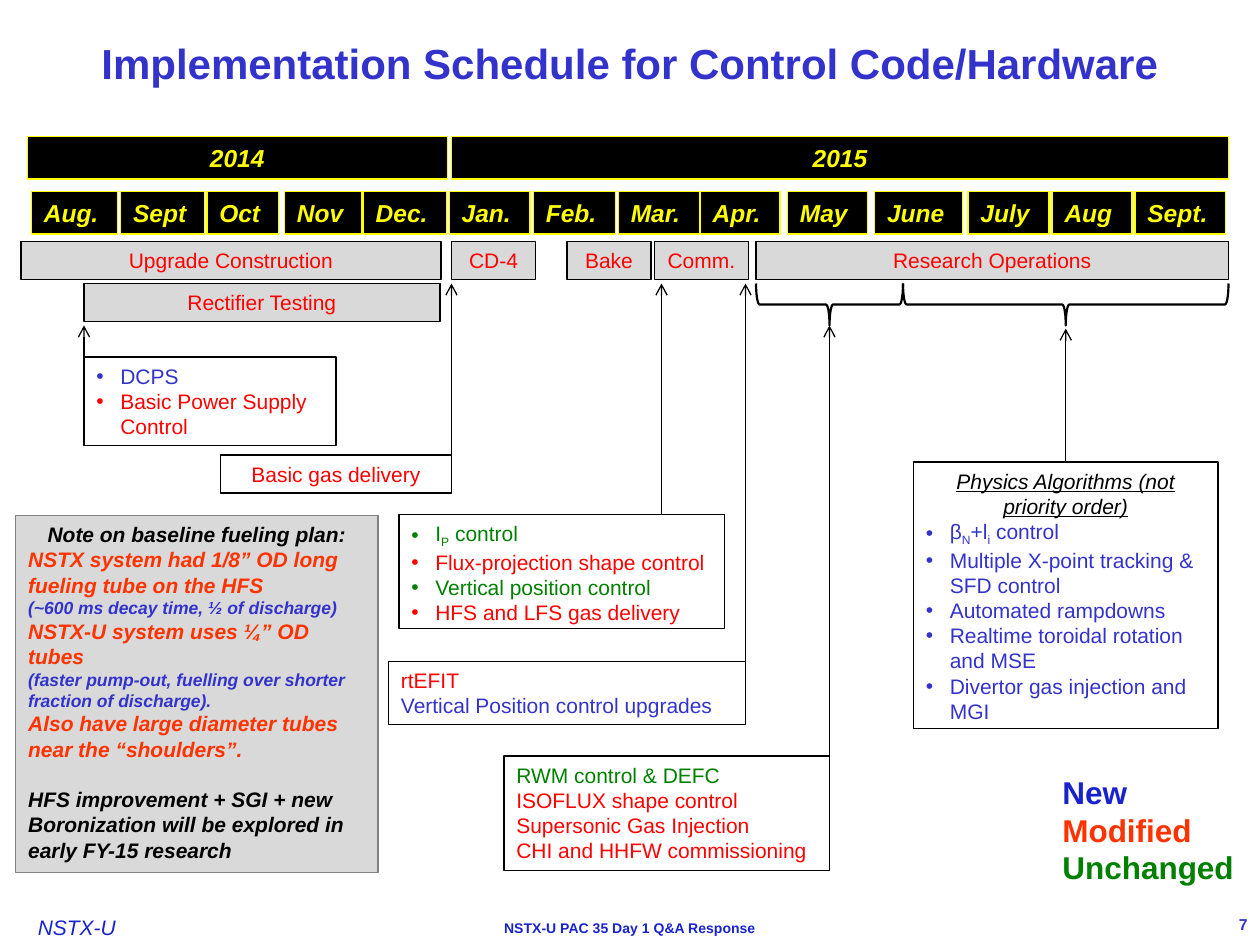
from lxml.etree import SubElement
from pptx import Presentation
from pptx.dml.color import RGBColor
from pptx.enum.shapes import MSO_CONNECTOR, MSO_SHAPE as SHAPE
from pptx.enum.text import MSO_ANCHOR as ANCHOR, MSO_AUTO_SIZE as AUTO, PP_ALIGN as ALIGN
from pptx.oxml.ns import qn
from pptx.util import Emu, Inches, Pt

BLACK = RGBColor(0x00, 0x00, 0x00)
YELLOW = RGBColor(0xFF, 0xFF, 0x00)
GREY = RGBColor(0xD9, 0xD9, 0xD9)
EDGE = RGBColor(0x80, 0x80, 0x80)
RED = RGBColor(0xFF, 0x00, 0x00)
ORANGE = RGBColor(0xFF, 0x33, 0x00)
GREEN = RGBColor(0x00, 0x80, 0x00)
BLUE = RGBColor(0x33, 0x33, 0xCC)
NAVY = RGBColor(0x18, 0x22, 0xCD)

# The grid is 120 columns by 90 rows, each a twelfth of an inch
UNIT = Inches(1) / 12
BAR_ROW, SECOND_ROW = 23, 27

# Month name, left column, columns wide
MONTHS = [
    ("Aug.", 3, 8.2), ("Sept", 11.5, 8), ("Oct", 19.7, 6.8), ("Nov", 27.1, 7.4),
    ("Dec.", 34.6, 7.9), ("Jan.", 42.8, 7.7), ("Feb.", 50.8, 7.8),
    ("Mar.", 58.9, 7.7), ("Apr.", 66.7, 7.6), ("May", 75, 7.6),
    ("June", 83.3, 8.4), ("July", 92.2, 7.7), ("Aug", 100.2, 7.6),
    ("Sept.", 108.1, 8.6),
]
YEARS = [("2014", 2.6, 40), ("2015", 43, 74)]
# Activity, left column, row, columns wide
ACTIVITIES = [
    ("Upgrade Construction", 2, BAR_ROW, 40), ("CD-4", 43, BAR_ROW, 8),
    ("Bake", 54, BAR_ROW, 8), ("Comm.", 62.3, BAR_ROW, 9),
    ("Research Operations", 72, BAR_ROW, 45),
    ("Rectifier Testing", 8, SECOND_ROW, 33.9),
]
# Column, start row, end row
ARROWS = [(8, 36, 31), (43, 45, 27), (63, 49, 27), (71, 63, 27),
          (79, 77, 31), (101.5, 44, 31.3)]
# Left column, columns wide
BRACES = [(72, 14), (86, 31)]


def grid(*cells):
    return [Emu(round(n * UNIT)) for n in cells]


def rows_for(lines):
    """Rows taken by a box holding this many 12-point lines."""
    return 1.2 + 2.42 * lines


def write(tf, text, color=BLACK, size=12, bold=False, italic=False, underline=False,
          align=ALIGN.LEFT, bullet=False, before=0):
    """Add a paragraph; text between bars is subscript."""
    p = tf.paragraphs[0]
    if p.runs:
        p = tf.add_paragraph()
    p.alignment = align
    if before:
        p.space_before = Pt(before)
    if bullet:
        pPr = p._p.get_or_add_pPr()
        pPr.set("marL", str(Inches(0.19)))
        pPr.set("indent", str(-Inches(0.19)))
        SubElement(pPr, qn("a:buFont"), typeface="Arial")
        SubElement(pPr, qn("a:buChar"), char="•")
    for i, part in enumerate(text.split("|")):
        r = p.add_run()
        r.text = part
        font = r.font
        font.name, font.size, font.color.rgb = "Arial", Pt(size), color
        font.bold, font.italic, font.underline = bold, italic, underline
        if i % 2:
            r._r.get_or_add_rPr().set("baseline", "-25000")


def add_box(slide, left, top, width, height, fill=None, line=BLACK, wrap=True):
    sp = slide.shapes.add_shape(SHAPE.RECTANGLE, *grid(left, top, width, height))
    sp.shadow.inherit = False
    if fill is None:
        sp.fill.background()
    else:
        sp.fill.solid()
        sp.fill.fore_color.rgb = fill
    sp.line.color.rgb, sp.line.width = line, Pt(0.75)
    tf = sp.text_frame
    tf.word_wrap, tf.vertical_anchor = wrap, ANCHOR.TOP
    tf.auto_size = AUTO.SHAPE_TO_FIT_TEXT
    return tf


def add_label(slide, left, top, width, height, wrap=True):
    tf = slide.shapes.add_textbox(*grid(left, top, width, height)).text_frame
    tf.word_wrap = wrap
    return tf


def add_list(slide, left, top, width, lines, items, bullet=False):
    tf = add_box(slide, left, top, width, rows_for(lines))
    for text, color in items:
        write(tf, text, color, bullet=bullet)
    return tf


def add_arrow(slide, column, start, end):
    x, y1, y2 = grid(column, start, end)
    line = slide.shapes.add_connector(MSO_CONNECTOR.STRAIGHT, x, y1, x, y2)
    line.line.color.rgb, line.line.width = BLACK, Pt(0.75)
    SubElement(line.line._get_or_add_ln(), qn("a:tailEnd"), type="arrow")
    SubElement(line._element.spPr, qn("a:effectLst"))


def add_brace(slide, left, width, top=SECOND_ROW, depth=4):
    """A right brace turned to point down, so its sides are swapped."""
    shift = (width - depth) / 2
    sp = slide.shapes.add_shape(
        SHAPE.RIGHT_BRACE, *grid(left + shift, top - shift, depth, width))
    sp.rotation = 90
    sp.shadow.inherit = False
    sp.fill.background()
    sp.line.color.rgb, sp.line.width = BLACK, Pt(1.25)


def add_timeline(slide):
    strong = dict(color=YELLOW, size=14, bold=True, italic=True)
    for name, left, width in MONTHS:
        write(add_box(slide, left, 18.25, width, 4.04, BLACK, YELLOW, wrap=False),
              name, **strong)
    for year, left, width in YEARS:
        write(add_box(slide, left, 13, width, 4.04, BLACK, YELLOW),
              year, align=ALIGN.CENTER, **strong)
    for name, left, top, width in ACTIVITIES:
        write(add_box(slide, left, top, width, rows_for(1), GREY),
              name, RED, align=ALIGN.CENTER)


def add_callouts(slide):
    add_list(slide, 8, 34, 24, 3,
             [("DCPS", BLUE), ("Basic Power Supply Control", RED)], bullet=True)
    gas = add_box(slide, 21, 43.33, 22, rows_for(1))
    write(gas, "Basic gas delivery", RED, align=ALIGN.CENTER)
    add_list(slide, 38, 49, 31, 4,
             [("I|P| control", GREEN), ("Flux-projection shape control", RED),
              ("Vertical position control", GREEN),
              ("HFS and LFS gas delivery", RED)], bullet=True)
    add_list(slide, 37, 63, 34, 2,
             [("rtEFIT", RED), ("Vertical Position control upgrades", BLUE)])
    add_list(slide, 48, 72, 31, 4,
             [("RWM control & DEFC", GREEN), ("ISOFLUX shape control", RED),
              ("Supersonic Gas Injection", RED), ("CHI and HHFW commissioning", RED)])
    physics = add_box(slide, 87, 44, 29, rows_for(10))
    write(physics, "Physics Algorithms (not priority order)", italic=True,
          underline=True, align=ALIGN.CENTER)
    for text in ("β|N|+l|i| control", "Multiple X-point tracking & SFD control",
                 "Automated rampdowns", "Realtime toroidal rotation and MSE",
                 "Divertor gas injection and MGI"):
        write(physics, text, BLUE, bullet=True)


def add_fueling_note(slide):
    tf = add_box(slide, 1.5, 49.1, 34.5, 34, GREY, EDGE)
    strong = dict(bold=True, italic=True)
    write(tf, "Note on baseline fueling plan:", align=ALIGN.CENTER, **strong)
    for text, color, size in (
            ("NSTX system had 1/8” OD long fueling tube on the HFS", ORANGE, 12),
            ("(~600 ms decay time, ½ of discharge)", BLUE, 10),
            ("NSTX-U system uses ¼” OD tubes", ORANGE, 12),
            ("(faster pump-out, fuelling over shorter fraction of discharge).", BLUE, 10),
            ("Also have large diameter tubes near the “shoulders”.", ORANGE, 12)):
        write(tf, text, color, size, **strong)
    write(tf, "HFS improvement + SGI + new Boronization will be explored in "
          "early FY-15 research", before=14.5, **strong)


def add_footer(slide):
    tf = add_label(slide, 3.6, 87.1, 10.4, 2.4)
    tf.margin_left = tf.margin_right = tf.margin_top = tf.margin_bottom = 0
    write(tf, "NSTX-U", NAVY, italic=True)
    write(add_label(slide, 24, 87, 72, 2.9), "NSTX-U PAC 35 Day 1 Q&A Response",
          NAVY, 8, bold=True, align=ALIGN.CENTER)
    number = add_label(slide, 110, 87, 10, 2)
    number.vertical_anchor = ANCHOR.MIDDLE
    write(number, "7", BLUE, 9, bold=True, align=ALIGN.RIGHT)


def main():
    prs = Presentation()
    prs.slide_width, prs.slide_height = grid(120, 90)
    slide = prs.slides.add_slide(prs.slide_layouts[5])

    # Title
    title = slide.shapes.title
    title.left, title.top, title.width, title.height = grid(0, 0, 120, 12)
    title.text_frame.vertical_anchor = ANCHOR.MIDDLE
    write(title.text_frame, "Implementation Schedule for Control Code/Hardware",
          BLUE, 24, bold=True, align=ALIGN.CENTER)

    # Schedule and what is ready at each date
    add_timeline(slide)
    add_callouts(slide)
    for arrow in ARROWS:
        add_arrow(slide, *arrow)
    for brace in BRACES:
        add_brace(slide, *brace)

    # Note, colour key and footer
    add_fueling_note(slide)
    key = add_label(slide, 100, 73, 19, 12.1, wrap=False)
    for text, color in (("New", NAVY), ("Modified", ORANGE), ("Unchanged", GREEN)):
        write(key, text, color, 18, bold=True)
    add_footer(slide)
    prs.save("out.pptx")


if __name__ == "__main__":
    main()
